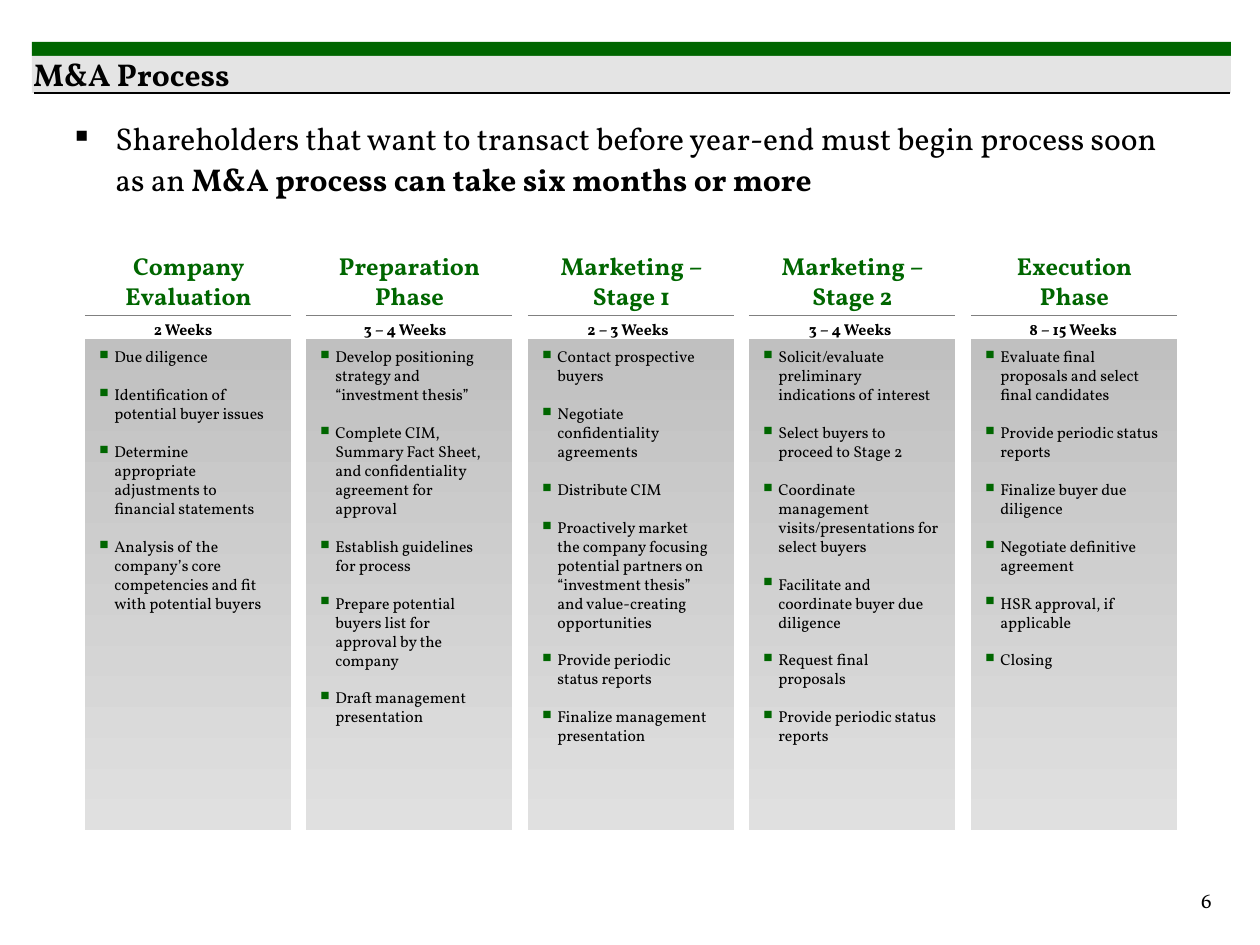
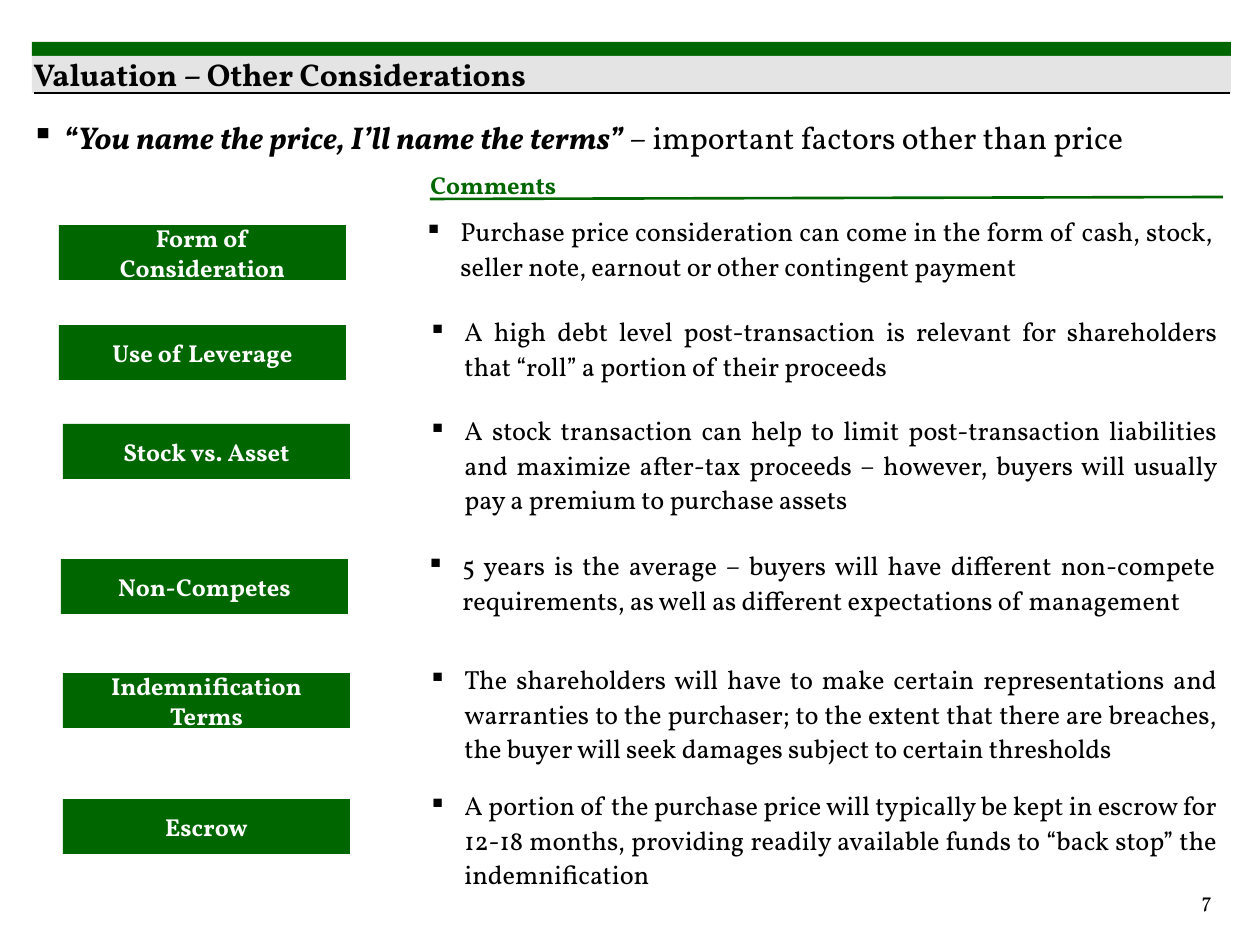
import lxml.etree
import pptx
import pptx.dml.color
import pptx.enum.shapes
import pptx.enum.text
import pptx.oxml.ns
import pptx.util

PX = 914400 / 126
FONT = "Vollkorn"
COLORS = {
    "green": "006600",
    "black": "000000",
    "white": "FFFFFF",
    "band": "E4E4E4",
    "rule": "808080",
    "panel_top": "C0C0C0",
    "panel_bottom": "E0E0E0",
}
ALIGN = pptx.enum.text.PP_ALIGN

PHASES = [
    ("Company Evaluation", "2 Weeks", 195, [
        "Due diligence",
        "Identification of potential buyer issues",
        "Determine appropriate adjustments to financial statements",
        "Analysis of the company’s core competencies and fit with potential buyers",
    ]),
    ("Preparation Phase", "3 – 4 Weeks", 199, [
        "Develop positioning strategy and “investment thesis”",
        "Complete CIM, Summary Fact Sheet, and confidentiality agreement for approval",
        "Establish guidelines for process",
        "Prepare potential buyers list for approval by the company",
        "Draft management presentation",
    ]),
    ("Marketing – Stage 1", "2 – 3 Weeks", 195, [
        "Contact prospective buyers",
        "Negotiate confidentiality agreements",
        "Distribute CIM",
        "Proactively market the company focusing potential partners on "
        "“investment thesis” and value-creating opportunities",
        "Provide periodic status reports",
        "Finalize management presentation",
    ]),
    ("Marketing – Stage 2", "3 – 4 Weeks", 200, [
        "Solicit/evaluate preliminary indications of interest",
        "Select buyers to proceed to Stage 2",
        "Coordinate management visits/presentations for select buyers",
        "Facilitate and coordinate buyer due diligence",
        "Request final proposals",
        "Provide periodic status reports",
    ]),
    ("Execution Phase", "8 – 15 Weeks", 202, [
        "Evaluate final proposals and select final candidates",
        "Provide periodic status reports",
        "Finalize buyer due diligence",
        "Negotiate definitive agreement",
        "HSR approval, if applicable",
        "Closing",
    ]),
]

CONSIDERATIONS = [
    (59, 353, 225, "Form of Consideration",
     "Purchase price consideration can come in the form of cash, stock, seller note, "
     "earnout or other contingent payment"),
    (59, 357, 325, "Use of Leverage",
     "A high debt level post-transaction is relevant for shareholders that “roll” "
     "a portion of their proceeds"),
    (63, 357, 424, "Stock vs. Asset",
     "A stock transaction can help to limit post-transaction liabilities and maximize "
     "after-tax proceeds – however, buyers will usually pay a premium to purchase assets"),
    (61, 355, 559, "Non-Competes",
     "5 years is the average – buyers will have different non-compete requirements, "
     "as well as different expectations of management"),
    (63, 357, 673, "Indemnification Terms",
     "The shareholders will have to make certain representations and warranties to the "
     "purchaser; to the extent that there are breaches, the buyer will seek damages "
     "subject to certain thresholds"),
    (63, 357, 799, "Escrow",
     "A portion of the purchase price will typically be kept in escrow for 12-18 months, "
     "providing readily available funds to “back stop” the indemnification"),
]


def emu(pixels):
    return pptx.util.Emu(round(pixels * PX))


def rgb(name):
    return pptx.dml.color.RGBColor.from_string(COLORS[name])


def add_bullet(paragraph, color, margin, indent, character="■", percent=100):
    properties = paragraph._p.get_or_add_pPr()
    properties.set("marL", str(emu(margin)))
    properties.set("indent", str(emu(-indent)))
    bullet_color = lxml.etree.SubElement(properties, pptx.oxml.ns.qn("a:buClr"))
    lxml.etree.SubElement(bullet_color, pptx.oxml.ns.qn("a:srgbClr"), val=COLORS[color])
    lxml.etree.SubElement(properties, pptx.oxml.ns.qn("a:buSzPct"), val=str(percent * 1000))
    lxml.etree.SubElement(properties, pptx.oxml.ns.qn("a:buChar"), char=character)


def style_paragraph(paragraph, size, color="black", bold=False, align=ALIGN.LEFT):
    paragraph.alignment = align
    paragraph.font.name = FONT
    paragraph.font.size = pptx.util.Pt(size)
    paragraph.font.bold = bold
    paragraph.font.color.rgb = rgb(color)


def add_text_frame(slide, left, top, width, height):
    shape = slide.shapes.add_textbox(emu(left), emu(top), emu(width), emu(height))
    shape.text_frame.word_wrap = True
    return shape.text_frame


def add_label(slide, text, left, top, width, height, size, **style):
    paragraph = add_text_frame(slide, left, top, width, height).paragraphs[0]
    paragraph.text = text
    style_paragraph(paragraph, size, **style)


def add_rectangle(slide, left, top, width, height, color=None):
    shape = slide.shapes.add_shape(
        pptx.enum.shapes.MSO_SHAPE.RECTANGLE, emu(left), emu(top), emu(width), emu(height))
    shape.shadow.inherit = False
    shape.line.fill.background()
    if color:
        shape.fill.solid()
        shape.fill.fore_color.rgb = rgb(color)
    return shape


def add_line(slide, start, end, color, weight):
    connector = slide.shapes.add_connector(
        pptx.enum.shapes.MSO_CONNECTOR.STRAIGHT, *map(emu, start + end))
    connector.line.color.rgb = rgb(color)
    connector.line.width = pptx.util.Pt(weight)
    lxml.etree.SubElement(connector._element.spPr, pptx.oxml.ns.qn("a:effectLst"))


def add_framed_slide(presentation, title, number):
    slide = presentation.slides.add_slide(presentation.slide_layouts[6])
    add_rectangle(slide, 32, 42, 1199, 14, "green")
    add_rectangle(slide, 32, 56, 1199, 37, "band")
    add_line(slide, (34, 93), (1230, 93), "black", 0.75)
    add_label(slide, title, 21, 49, 964, 50, 18, bold=True)
    add_label(slide, str(number), 930, 881, 294, 42, 12, align=ALIGN.RIGHT)
    return slide


def add_phase_column(slide, left, top, week_shift, phase):
    name, duration, text_width, tasks = phase
    width = 206
    panel = add_rectangle(slide, left, top + 94, width, 491)
    panel.fill.gradient()
    panel.fill.gradient_angle = 270
    for stop, color in zip(panel.fill.gradient_stops, ("panel_top", "panel_bottom")):
        stop.color.rgb = rgb(color)
    add_label(slide, name, left + 13, top, 181, 72, 14,
              color="green", bold=True, align=ALIGN.CENTER)
    add_line(slide, (left, top + 70), (left + width, top + 70), "rule", 0.5)
    add_label(slide, duration, left + week_shift, top + 69, width, 31, 9,
              bold=True, align=ALIGN.CENTER)
    frame = add_text_frame(slide, left + 2, top + 96, text_width, 420)
    for index, task in enumerate(tasks):
        paragraph = frame.paragraphs[0] if index == 0 else frame.add_paragraph()
        paragraph.text = task
        paragraph.space_after = pptx.util.Pt(10.8)
        add_bullet(paragraph, "green", 15, 15, percent=80)
        style_paragraph(paragraph, 9)


def add_consideration(slide, label_left, comment_left, top, name, comment):
    box = add_rectangle(slide, label_left, top, 287, 55, "green")
    frame = box.text_frame
    frame.word_wrap = True
    frame.vertical_anchor = pptx.enum.text.MSO_ANCHOR.MIDDLE
    frame.margin_top = frame.margin_bottom = emu(13)
    frame.text = name
    style_paragraph(frame.paragraphs[0], 14, "white", True, ALIGN.CENTER)

    paragraph = add_text_frame(slide, comment_left, top - 19, 873, 126).paragraphs[0]
    paragraph.text = comment
    paragraph.line_spacing = 1.1
    add_bullet(paragraph, "black", 95, 32, percent=55)
    style_paragraph(paragraph, 15, align=ALIGN.JUSTIFY)


def build_process_slide(presentation):
    slide = add_framed_slide(presentation, "M&A Process", 6)
    paragraph = add_text_frame(slide, 63, 110, 1134, 106).paragraphs[0]
    paragraph.line_spacing = 1.08
    add_bullet(paragraph, "black", 40, 40, percent=55)
    style_paragraph(paragraph, 18)
    paragraph.add_run().text = (
        "Shareholders that want to transact before year-end must begin process soon as an ")
    emphasis = paragraph.add_run()
    emphasis.text = "M&A process can take six months or more"
    emphasis.font.bold = True
    for index, phase in enumerate(PHASES):
        add_phase_column(slide, 85 + 443 * index // 2, 245, index - 5, phase)


def build_considerations_slide(presentation):
    slide = add_framed_slide(presentation, "Valuation – Other Considerations", 7)
    paragraph = add_text_frame(slide, 19, 112, 1213, 64).paragraphs[0]
    add_bullet(paragraph, "black", 32, 32, character="▪")
    style_paragraph(paragraph, 18, align=ALIGN.JUSTIFY)
    quote = paragraph.add_run()
    quote.text = "“You name the price, I’ll name the terms” "
    quote.font.bold = quote.font.italic = True
    paragraph.add_run().text = "– important factors other than price"
    add_label(slide, "Comments", 418, 164, 302, 42, 14, color="green", bold=True)
    add_line(slide, (430, 199), (1223, 197), "green", 1.5)
    for consideration in CONSIDERATIONS:
        add_consideration(slide, *consideration)


def main():
    presentation = pptx.Presentation()
    presentation.slide_width = emu(1260)
    presentation.slide_height = emu(945)
    build_process_slide(presentation)
    build_considerations_slide(presentation)
    presentation.save("out.pptx")


if __name__ == "__main__":
    main()
